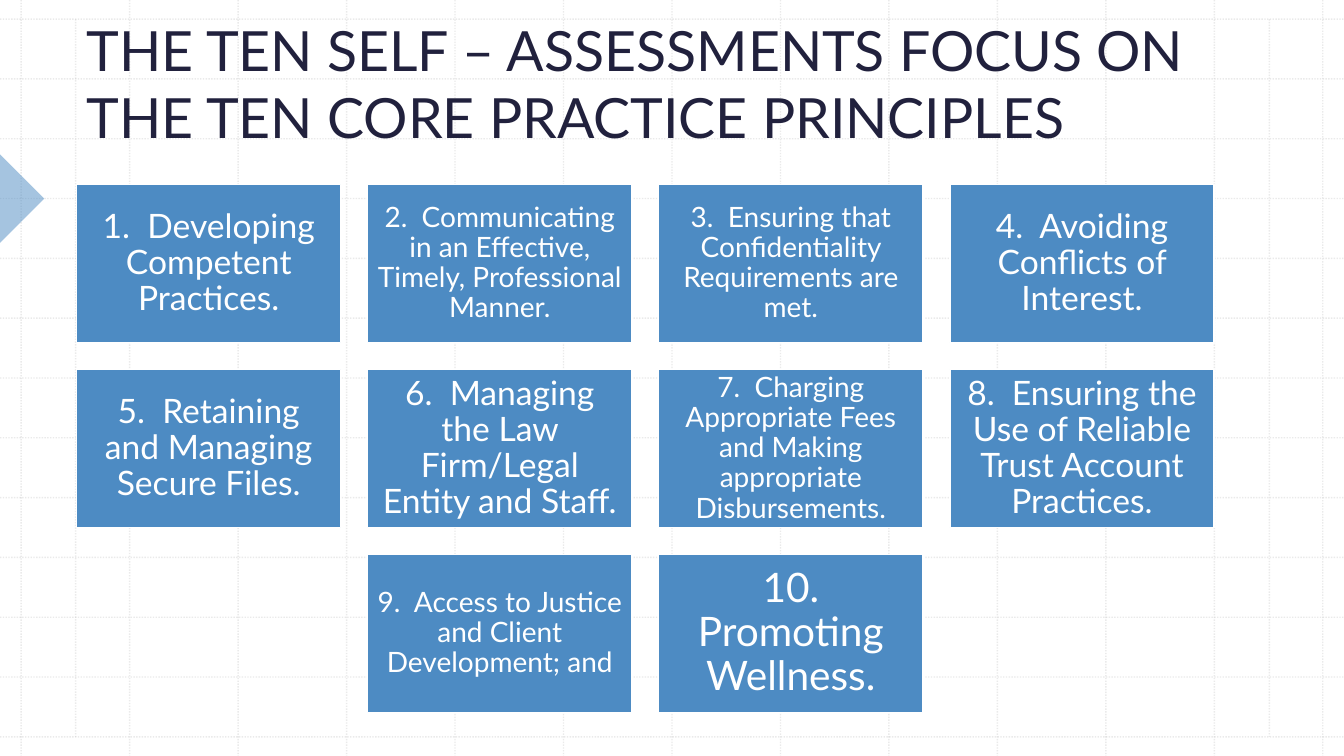
from lxml.etree import SubElement
from pptx import Presentation
from pptx.dml.color import RGBColor
from pptx.enum.dml import MSO_LINE
from pptx.enum.shapes import MSO_CONNECTOR, MSO_SHAPE
from pptx.enum.text import MSO_ANCHOR, MSO_AUTO_SIZE, PP_ALIGN
from pptx.oxml.ns import qn
from pptx.util import Inches, Pt

WIDTH, HEIGHT = 13.33, 7.5
FONT = "Lato"
BLUE, NAVY, WHITE, GREY = "4D8BC3", "21213D", "FFFFFF", "BCBCBC"

GRID_STEPS = 12
GRID_LEFT, GRID_RIGHT = 0.21, 13.12
GRID_TOP, GRID_BOTTOM = 0.19, 7.31
MARGIN_LINES = (0.75, 12.59)

CARD_LEFT, CARD_TOP = 0.76, 1.83
CARD_WIDTH, CARD_HEIGHT = 2.62, 1.57
COLUMN_PITCH, ROW_PITCH = 2.887, 1.835

TITLE = "THE TEN SELF – ASSESSMENTS FOCUS ON THE TEN CORE PRACTICE PRINCIPLES"
# First column of each row, then (text, size, inset) for its cards
PRINCIPLE_ROWS = [
    (0, [
        ("1.  Developing Competent Practices.", 24, 0.1),
        ("2.  Communicating in an Effective, Timely, Professional Manner.", 20, 0.08),
        ("3.  Ensuring that Confidentiality Requirements are met.", 20, 0.08),
        ("4.  Avoiding Conflicts of Interest.", 24, 0.1),
    ]),
    (0, [
        ("5.  Retaining and Managing Secure Files.", 24, 0.1),
        ("6.  Managing the Law Firm/Legal Entity and Staff.", 24, 0.1),
        ("7.  Charging Appropriate Fees and Making appropriate Disbursements.", 20, 0.08),
        ("8.  Ensuring the Use of Reliable Trust Account Practices.", 24, 0.1),
    ]),
    (1, [
        ("9.  Access to Justice and Client Development; and", 20, 0.08),
        ("10. Promoting Wellness.", 29, 0.12),
    ]),
]


def color(hex_code):
    return RGBColor.from_string(hex_code)


def set_opacity(fill, percent):
    """Make the solid color inside a fill or line element see-through."""
    srgb = next(fill.iter(qn("a:srgbClr")))
    SubElement(srgb, qn("a:alpha")).set("val", str(percent * 1000))


def write_text(shape, text, *, size, ink, align, anchor, inset, spacing=1.0):
    """Fill a shape with one paragraph; inset is (horizontal, vertical)."""
    frame = shape.text_frame
    frame.word_wrap = True
    frame.auto_size = MSO_AUTO_SIZE.NONE
    frame.vertical_anchor = anchor
    frame.margin_left = frame.margin_right = Inches(inset[0])
    frame.margin_top = frame.margin_bottom = Inches(inset[1])
    paragraph = frame.paragraphs[0]
    paragraph.alignment = align
    paragraph.line_spacing = spacing
    run = paragraph.add_run()
    run.text = text
    run.font.name = FONT
    run.font.size = Pt(size)
    run.font.color.rgb = color(ink)


def add_grid_line(slide, x1, y1, x2, y2):
    rule = slide.shapes.add_connector(
        MSO_CONNECTOR.STRAIGHT, Inches(x1), Inches(y1), Inches(x2), Inches(y2))
    rule.line.color.rgb = color(GREY)
    rule.line.width = Pt(1)
    rule.line.dash_style = MSO_LINE.ROUND_DOT
    properties = rule.element.spPr
    set_opacity(properties, 30)
    SubElement(properties, qn("a:effectLst"))


def add_grid(slide):
    for step in range(GRID_STEPS + 1):
        share = step / GRID_STEPS
        x = GRID_LEFT + share * (GRID_RIGHT - GRID_LEFT)
        y = GRID_TOP + share * (GRID_BOTTOM - GRID_TOP)
        add_grid_line(slide, x, 0, x, HEIGHT)
        add_grid_line(slide, 0, y, WIDTH, y)
    for x in MARGIN_LINES:
        add_grid_line(slide, x, GRID_TOP, x, GRID_BOTTOM)


def add_block(slide, preset, left, top, width, height):
    block = slide.shapes.add_shape(
        preset, Inches(left), Inches(top), Inches(width), Inches(height))
    block.shadow.inherit = False
    block.fill.solid()
    block.fill.fore_color.rgb = color(BLUE)
    return block


def add_edge_marker(slide):
    marker = add_block(slide, MSO_SHAPE.RIGHT_TRIANGLE, -0.31, 1.66, 0.62, 0.62)
    marker.rotation = 225
    marker.line.fill.background()
    set_opacity(marker.element.spPr, 50)


def place_title(slide):
    title = slide.shapes.title
    title.left, title.top = Inches(CARD_LEFT), Inches(0.12)
    title.width, title.height = Inches(11.29), Inches(1.41)
    write_text(title, TITLE, size=39.6, ink=NAVY, align=PP_ALIGN.LEFT,
               anchor=MSO_ANCHOR.BOTTOM, inset=(0.1, 0.05))
    slide.shapes.element.append(title.element)  # in front of the grid


def add_card(slide, column, row, text, size, inset):
    card = add_block(slide, MSO_SHAPE.RECTANGLE,
                     CARD_LEFT + column * COLUMN_PITCH,
                     CARD_TOP + row * ROW_PITCH, CARD_WIDTH, CARD_HEIGHT)
    card.line.color.rgb = color(WHITE)
    card.line.width = Pt(1)
    write_text(card, text, size=size, ink=WHITE, align=PP_ALIGN.CENTER,
               anchor=MSO_ANCHOR.MIDDLE, inset=(inset, inset), spacing=0.9)


def main():
    deck = Presentation()
    deck.slide_width, deck.slide_height = Inches(WIDTH), Inches(HEIGHT)
    slide = deck.slides.add_slide(deck.slide_layouts.get_by_name("Title Only"))
    add_grid(slide)
    add_edge_marker(slide)
    place_title(slide)
    for row, (first_column, principles) in enumerate(PRINCIPLE_ROWS):
        for column, principle in enumerate(principles, first_column):
            add_card(slide, column, row, *principle)
    deck.save("out.pptx")


if __name__ == "__main__":
    main()
